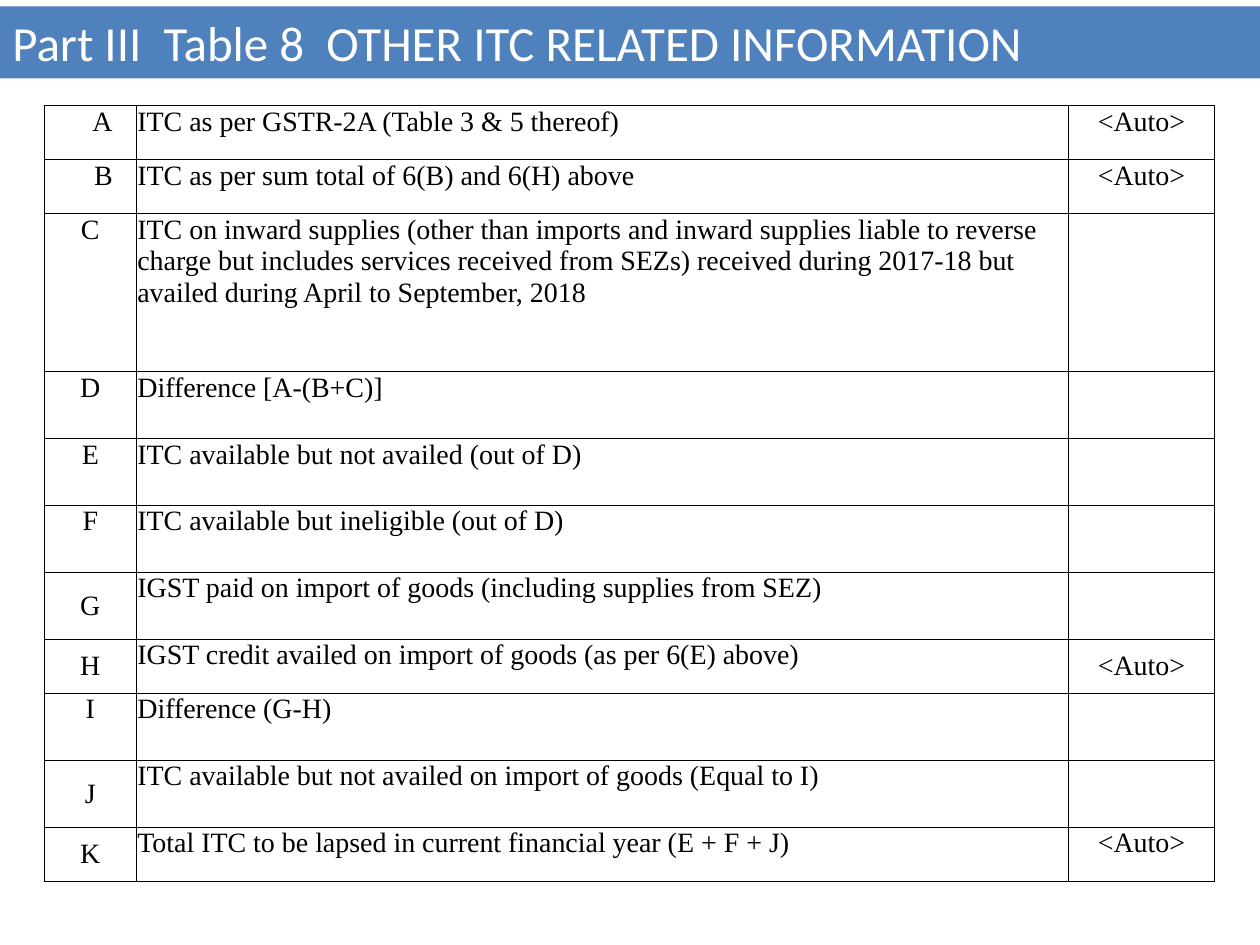
from lxml import etree
from pptx import Presentation
from pptx import util as u
from pptx.dml.color import RGBColor
from pptx.enum import shapes, text
from pptx.oxml.ns import qn

# Content
TITLE = "Part III  Table 8  OTHER ITC RELATED INFORMATION"
AUTO = "<Auto>"
LOW, MID, TALL = 1.09, 1.35, 3.17  # row heights in cm
ROWS = [  # letter, wording, value, height
    ("A", "ITC as per GSTR-2A (Table 3 & 5 thereof)", AUTO, LOW),
    ("B", "ITC as per sum total of 6(B) and 6(H) above", AUTO, LOW),
    ("C", "ITC on inward supplies (other than imports and inward supplies "
          "liable to reverse charge but includes services received from SEZs) "
          "received during 2017-18 but availed during April to September, 2018",
     "", TALL),
    ("D", "Difference [A-(B+C)]", "", MID),
    ("E", "ITC available but not availed (out of D)", "", MID),
    ("F", "ITC available but ineligible (out of D)", "", MID),
    ("G", "IGST paid on import of goods (including supplies from SEZ)", "", MID),
    ("H", "IGST credit availed on import of goods (as per 6(E) above)", AUTO, LOW),
    ("I", "Difference (G-H)", "", MID),
    ("J", "ITC available but not availed on import of goods (Equal to I)", "", MID),
    ("K", "Total ITC to be lapsed in current financial year (E + F + J)", AUTO, LOW),
]
COLS = [1.86, 18.79, 2.94]
RIGHT = "AB"  # letters set to the right
MIDDLE = {("G", 0), ("H", 0), ("H", 2), ("J", 0), ("K", 0)}

BLUE = RGBColor(0x4F, 0x81, 0xBD)
WHITE = RGBColor(0xFF, 0xFF, 0xFF)
BLACK = RGBColor(0, 0, 0)
ALIGN = text.PP_ALIGN
ANCHOR = text.MSO_ANCHOR


def style(para, face, size, color):
    for run in para.runs:
        run.font.name = face
        run.font.size = u.Pt(size)
        run.font.color.rgb = color


def border(cell):
    props = cell._tc.get_or_add_tcPr()
    for i, side in enumerate(("lnL", "lnR", "lnT", "lnB")):
        line = etree.Element(qn("a:" + side), w=str(u.Pt(0.5)))
        fill = etree.SubElement(line, qn("a:solidFill"))
        etree.SubElement(fill, qn("a:srgbClr"), val=str(BLACK))
        props.insert(i, line)


deck = Presentation()
deck.slide_width, deck.slide_height = u.Cm(25.4), u.Cm(19.05)
slide = deck.slides.add_slide(deck.slide_layouts[6])

# Title band
band = slide.shapes.add_shape(shapes.MSO_SHAPE.RECTANGLE, 0, u.Cm(0.13),
                              u.Cm(25.4), u.Cm(1.45))
band.shadow.inherit = False
band.fill.solid()
band.fill.fore_color.rgb = BLUE
band.line.fill.background()
frame = band.text_frame
frame.text = TITLE
frame.vertical_anchor = ANCHOR.MIDDLE
frame.paragraphs[0].alignment = ALIGN.LEFT
style(frame.paragraphs[0], "Calibri", 28, WHITE)

# Table
grid = slide.shapes.add_table(
    len(ROWS), len(COLS), u.Cm(0.89), u.Cm(2.13),
    u.Cm(sum(COLS)), u.Cm(sum(row[3] for row in ROWS))).table
grid.first_row = grid.horz_banding = False
for col, width in zip(grid.columns, COLS):
    col.width = u.Cm(width)

for r, (mark, words, value, height) in enumerate(ROWS):
    grid.rows[r].height = u.Cm(height)
    for c, label in enumerate((mark, words, value)):
        cell = grid.cell(r, c)
        shift = c == 0 and mark in RIGHT
        cell.margin_left = cell.margin_top = u.Cm(0.02)
        cell.margin_right = u.Cm(0.48 if shift else 0.02)
        cell.margin_bottom = 0
        mid = (mark, c) in MIDDLE
        cell.vertical_anchor = ANCHOR.MIDDLE if mid else ANCHOR.TOP
        cell.fill.background()
        border(cell)
        cell.text_frame.text = label
        para = cell.text_frame.paragraphs[0]
        para.alignment = (ALIGN.RIGHT if shift else
                          ALIGN.LEFT if c == 1 else ALIGN.CENTER)
        style(para, "Times New Roman", 16, BLACK)

deck.save("out.pptx")
